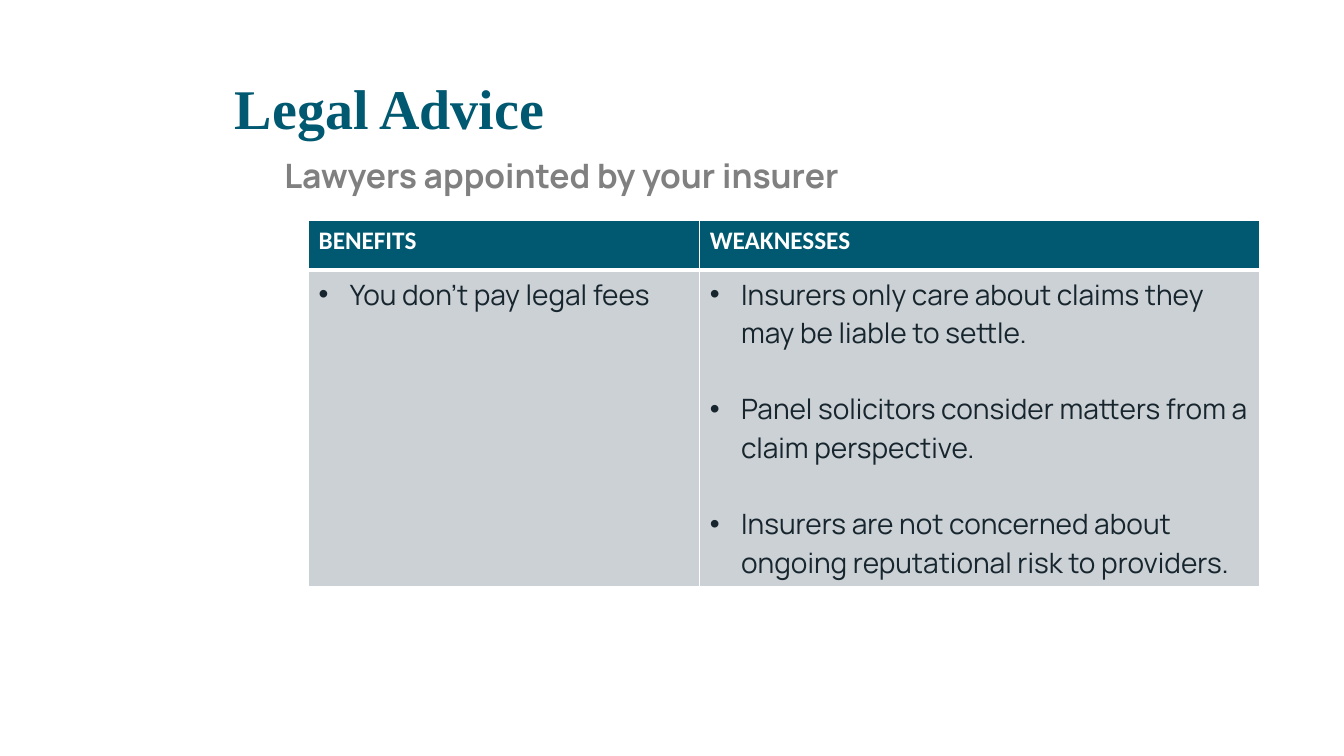
from lxml.etree import SubElement
from pptx import Presentation
from pptx.dml.color import RGBColor
from pptx.enum.text import MSO_ANCHOR, MSO_AUTO_SIZE, PP_ALIGN
from pptx.oxml.ns import qn
from pptx.util import Inches, Pt

TEAL, GREY, SILVER, INK, WHITE = "005970", "808080", "CCD1D5", "17262E", "FFFFFF"
HEADINGS = ["BENEFITS", "WEAKNESSES"]
POINTS = [
    ["You don’t pay legal fees"],
    [
        "Insurers only care about claims they may be liable to settle.",
        "Panel solicitors consider matters from a claim perspective.",
        "Insurers are not concerned about ongoing reputational risk to providers.",
    ],
]


def color(value):
    return RGBColor.from_string(value)


def write(paragraph, text, *, size, font, fill, bold=False, line=None, before=0, bullet=False):
    properties = paragraph._p.get_or_add_pPr()
    hanging = Inches(0.31) if bullet else 0
    properties.set("marL", str(hanging))
    properties.set("indent", str(-hanging))
    if bullet:
        SubElement(properties, qn("a:buFont"), typeface="Arial")
        SubElement(properties, qn("a:buChar"), char="•")
    else:
        SubElement(properties, qn("a:buNone"))
    paragraph.alignment = PP_ALIGN.LEFT
    paragraph.space_before = Pt(before)
    if line:
        paragraph.line_spacing = line
    run = paragraph.add_run()
    run.text = text
    run.font.size = Pt(size)
    run.font.name = font
    run.font.bold = bold
    run.font.color.rgb = color(fill)


def add_borders(cell, bottom):
    properties = cell._tc.get_or_add_tcPr()
    widths = {"a:lnL": 1, "a:lnR": 1, "a:lnT": 1, "a:lnB": bottom}
    for index, (side, width) in enumerate(widths.items()):
        border = properties.makeelement(qn(side), {"w": str(Pt(width))})
        SubElement(SubElement(border, qn("a:solidFill")), qn("a:srgbClr"), val=WHITE)
        properties.insert(index, border)


class SlideBuilder:
    """Places elements on a grid of 100 columns by 100 rows."""

    def __init__(self, presentation):
        self.column = presentation.slide_width / 100
        self.row = presentation.slide_height / 100
        self.slide = presentation.slides.add_slide(presentation.slide_layouts[1])

    def across(self, columns):
        return round(columns * self.column)

    def down(self, rows):
        return round(rows * self.row)

    def place(self, shape, left, top, width, height):
        shape.left, shape.top = self.across(left), self.down(top)
        shape.width, shape.height = self.across(width), self.down(height)
        shape.text_frame.auto_size = MSO_AUTO_SIZE.NONE
        shape.text_frame.word_wrap = True
        return shape.text_frame

    def title(self, text, *box):
        frame = self.place(self.slide.shapes.title, *box)
        frame.margin_left = frame.margin_right = frame.margin_bottom = 0
        frame.margin_top = Inches(0.01)
        frame.vertical_anchor = MSO_ANCHOR.MIDDLE
        write(frame.paragraphs[0], text, size=40, font="Times New Roman",
              fill=TEAL, bold=True, line=0.9)

    def subtitle(self, text, *box):
        frame = self.place(self.slide.placeholders[1], *box)
        frame.vertical_anchor = MSO_ANCHOR.TOP
        write(frame.paragraphs[0], text, size=24, font="Manrope",
              fill=GREY, bold=True, line=0.9)

    def comparison(self, headings, points, left, top, widths, heights):
        frame = self.slide.shapes.add_table(
            len(heights), len(widths), self.across(left), self.down(top),
            self.across(sum(widths)), self.down(sum(heights)))
        table = frame.table
        for row, height in zip(table.rows, heights):
            row.height = self.down(height)
        for index, (heading, items) in enumerate(zip(headings, points)):
            table.columns[index].width = self.across(widths[index])
            header = self.cell(table.cell(0, index), TEAL, bottom=3)
            write(header.paragraphs[0], heading, size=18, font="Calibri", fill=WHITE, bold=True)
            body = self.cell(table.cell(1, index), SILVER, bottom=1)
            for number, item in enumerate(items):
                paragraph = body.add_paragraph() if number else body.paragraphs[0]
                write(paragraph, item, size=20, font="Manrope", fill=INK,
                      before=27.3 if number else 0, bullet=True)

    def cell(self, cell, fill, bottom):
        cell.fill.solid()
        cell.fill.fore_color.rgb = color(fill)
        add_borders(cell, bottom)
        return cell.text_frame


def main():
    presentation = Presentation()
    presentation.slide_width, presentation.slide_height = Inches(13.33), Inches(7.5)
    builder = SlideBuilder(presentation)
    builder.title("Legal Advice", 17.48, 10.53, 77.72, 8.27)
    builder.subtitle("Lawyers appointed by your insurer", 20.4, 20.4, 74.72, 64.4)
    builder.comparison(HEADINGS, POINTS, left=22.96, top=29.2,
                       widths=[29.11, 41.63], heights=[6.53, 41.87])
    presentation.save("out.pptx")


if __name__ == "__main__":
    main()
